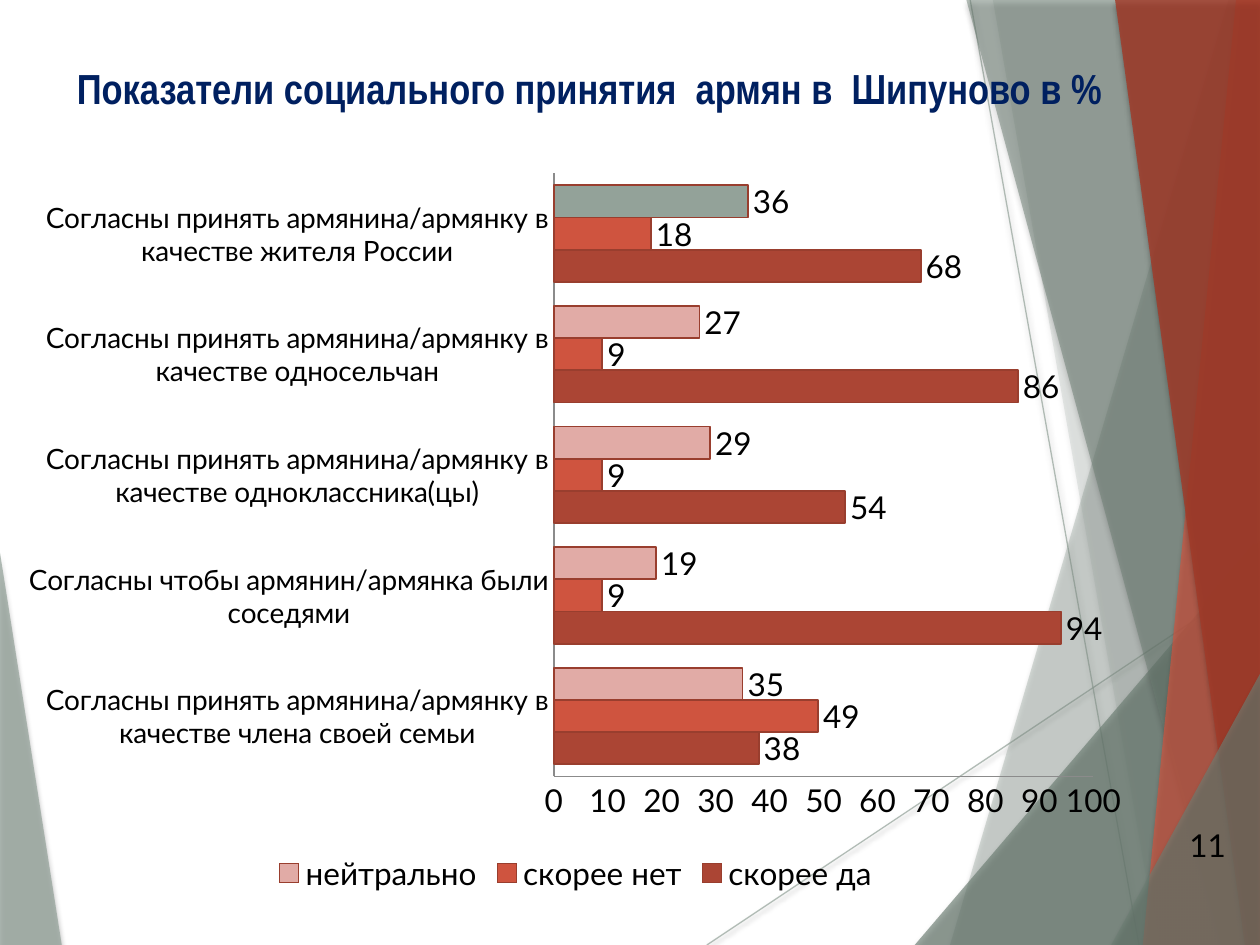
from dataclasses import dataclass

from lxml.etree import SubElement
from pptx import Presentation
from pptx.chart.data import CategoryChartData
from pptx.dml.color import RGBColor
from pptx.enum.chart import XL_CHART_TYPE, XL_LABEL_POSITION, XL_LEGEND_POSITION, XL_TICK_MARK
from pptx.enum.shapes import MSO_CONNECTOR
from pptx.enum.text import MSO_ANCHOR, MSO_AUTO_SIZE, PP_ALIGN
from pptx.oxml.ns import qn
from pptx.util import Inches, Pt

WIDTH, HEIGHT = Inches(10), Inches(7.5)


@dataclass(frozen=True)
class Theme:
    """Colours, fonts and type sizes of the slide."""

    navy: str = "002060"
    black: str = "000000"
    sage: str = "93A299"
    moss: str = "6B7D72"
    coral: str = "CF543F"
    rust: str = "A23A28"
    brick: str = "AB4534"
    rose: str = "E1ABA6"
    outline: str = "993E2E"
    axis: str = "8B8B8B"
    title_font: str = "Arial Narrow"
    body_font: str = "Lato"
    title_size: int = 24
    category_size: int = 16
    body_size: int = 18


THEME = Theme()

LEFT_FACET = [(0, 58.5), (4.9, 100), (0, 100)]
RAYS = [((56.1, 100), (100, 61)), ((77, 0), (90.4, 100))]
RIGHT_FACETS = [
    ([(97.5, 0), (75.4, 100), (100, 100), (100, 0)], THEME.sage, 36),
    ([(78.8, 0), (91.9, 100), (100, 100), (100, 0)], THEME.sage, 20),
    ([(72.6, 100), (100, 57.2), (100, 100)], THEME.moss, 66),
    ([(76.7, 0), (97, 100), (100, 100), (100, 0)], THEME.moss, 50),
    ([(98.1, 0), (90.7, 100), (100, 100), (100, 0)], THEME.coral, 70),
    ([(88.5, 0), (98.8, 100), (100, 100), (100, 0)], THEME.rust, 82),
    ([(88.2, 100), (100, 71.3), (100, 100)], THEME.moss, 66),
]
CATEGORIES = [
    "Согласны принять армянина/армянку в качестве члена своей семьи",
    "Согласны чтобы армянин/армянка были соседями",
    "Согласны принять армянина/армянку в качестве одноклассника(цы)",
    "Согласны принять армянина/армянку в качестве односельчан",
    "Согласны принять армянина/армянку в качестве жителя России",
]
SERIES = [
    ("скорее да", (38, 94, 54, 86, 68), THEME.brick),
    ("скорее нет", (49, 9, 9, 9, 18), THEME.coral),
    ("нейтрально", (35, 19, 29, 27, 36), THEME.rose),
]


def spot(x, y):
    """Turn percentages of the slide into a position."""
    return round(WIDTH * x / 100), round(HEIGHT * y / 100)


def frame(left, top, width, height):
    """Turn percentages of the slide into a left, top, width and height."""
    return (*spot(left, top), *spot(width, height))


def style_font(font, size, color=THEME.black, name=THEME.body_font, bold=False):
    """Set the size, colour, face and weight of a font."""
    font.size, font.name, font.bold = Pt(size), name, bold
    font.color.rgb = RGBColor.from_string(color)


def paint(fill, color):
    """Give a fill one solid colour."""
    fill.solid()
    fill.fore_color.rgb = RGBColor.from_string(color)


def draw_line(line, color, width):
    """Set the colour and width of a line."""
    paint(line.fill, color)
    line.width = Pt(width)


def add_glaze(shape, opacity, shade, blur, distance):
    """Make a shape see-through and lay a soft shadow below it."""
    properties = shape.element.spPr
    for color in list(properties.iter(qn("a:srgbClr"))):
        SubElement(color, qn("a:alpha"), val=str(opacity * 1000))
    effects = SubElement(properties, qn("a:effectLst"))
    shadow = SubElement(effects, qn("a:outerShdw"), blurRad=str(Pt(blur)),
                        dist=str(Pt(distance)), dir="5400000", rotWithShape="0")
    color = SubElement(shadow, qn("a:srgbClr"), val=THEME.black)
    SubElement(color, qn("a:alpha"), val=str(shade * 1000))


def add_facet(slide, corners, color, opacity):
    """Draw a translucent polygon."""
    start, *others = [spot(*corner) for corner in corners]
    builder = slide.shapes.build_freeform(*start)
    builder.add_line_segments(others, close=True)
    facet = builder.convert_to_shape()
    paint(facet.fill, color)
    facet.line.fill.background()
    add_glaze(facet, opacity, 35, 3, 2)


def add_ray(slide, start, end):
    """Draw a thin translucent line."""
    ray = slide.shapes.add_connector(MSO_CONNECTOR.STRAIGHT, *spot(*start), *spot(*end))
    draw_line(ray.line, THEME.sage, 0.75)
    add_glaze(ray, 70, 38, 3.1, 1.6)


def place_title(slide, text):
    """Fill the title placeholder and bring it before the backdrop."""
    title = slide.shapes.title
    title.element.getparent().append(title.element)
    title.left, title.top, title.width, title.height = frame(5.1, 5.9, 90, 8.4)
    box = title.text_frame
    box.text = text
    box.word_wrap, box.auto_size = True, MSO_AUTO_SIZE.NONE
    box.vertical_anchor = MSO_ANCHOR.TOP
    para = box.paragraphs[0]
    para.alignment = PP_ALIGN.LEFT
    style_font(para.runs[0].font, THEME.title_size, THEME.navy, THEME.title_font, True)


def place_plot(chart, **shares):
    """Fix the inner plot area as shares of the chart."""
    area = chart.element.find(".//" + qn("c:plotArea"))
    for old in area.findall(qn("c:layout")):
        area.remove(old)
    layout = SubElement(area, qn("c:layout"))
    area.insert(0, layout)
    manual = SubElement(layout, qn("c:manualLayout"))
    settings = {"layoutTarget": "inner", "xMode": "edge", "yMode": "edge", **shares}
    for name, value in settings.items():
        SubElement(manual, qn("c:" + name), val=str(value))


def style_axis(axis, size):
    """Show an axis with labels but without ticks or gridlines."""
    axis.has_major_gridlines = False
    axis.major_tick_mark = axis.minor_tick_mark = XL_TICK_MARK.NONE
    style_font(axis.tick_labels.font, size)
    draw_line(axis.format.line, THEME.axis, 1)


def style_series(series, color):
    """Colour the bars of a series and label their values."""
    paint(series.format.fill, color)
    draw_line(series.format.line, THEME.outline, 1)
    labels = series.data_labels
    labels.show_value, labels.position = True, XL_LABEL_POSITION.OUTSIDE_END
    style_font(labels.font, THEME.body_size)


def add_acceptance_chart(slide):
    """Add the bar chart of acceptance by social role."""
    data = CategoryChartData(number_format="General")
    data.categories = CATEGORIES
    for name, values, _ in SERIES:
        data.add_series(name, values)
    chart = slide.shapes.add_chart(
        XL_CHART_TYPE.BAR_CLUSTERED, *frame(2, 14.3, 87.4, 80.8), data).chart
    chart.has_title = False
    style_font(chart.font, THEME.body_size)
    chart.has_legend = True
    chart.legend.position = XL_LEGEND_POSITION.BOTTOM
    chart.legend.include_in_layout = False
    style_font(chart.legend.font, THEME.body_size)
    style_axis(chart.category_axis, THEME.category_size)
    style_axis(chart.value_axis, THEME.body_size)
    scale = chart.value_axis
    scale.minimum_scale, scale.maximum_scale, scale.major_unit = 0, 100, 10
    plot = chart.plots[0]
    plot.gap_width, plot.vary_by_categories = 75, False
    for series, (_, _, color) in zip(plot.series, SERIES):
        style_series(series, color)
    highlight = plot.series[-1].points[len(CATEGORIES) - 1].format
    paint(highlight.fill, THEME.sage)
    draw_line(highlight.line, THEME.outline, 1)
    place_plot(chart, x=0.48, y=0.05, w=0.49, h=0.79)


def add_page_number(slide, text):
    """Write the page number near the lower right corner."""
    box = slide.shapes.add_textbox(*frame(91.7, 86.8, 8.3, 5.3)).text_frame
    box.text = text
    box.word_wrap, box.auto_size = True, MSO_AUTO_SIZE.SHAPE_TO_FIT_TEXT
    para = box.paragraphs[0]
    para.alignment = PP_ALIGN.CENTER
    style_font(para.runs[0].font, THEME.body_size)


def main():
    """Build the slide and save the deck."""
    deck = Presentation()
    deck.slide_width, deck.slide_height = WIDTH, HEIGHT
    slide = deck.slides.add_slide(deck.slide_layouts[5])
    add_facet(slide, LEFT_FACET, THEME.sage, 70)
    for start, end in RAYS:
        add_ray(slide, start, end)
    for corners, color, opacity in RIGHT_FACETS:
        add_facet(slide, corners, color, opacity)
    place_title(slide, "Показатели социального принятия  армян в  Шипуново в %")
    add_acceptance_chart(slide)
    add_page_number(slide, "11")
    deck.save("out.pptx")


if __name__ == "__main__":
    main()
